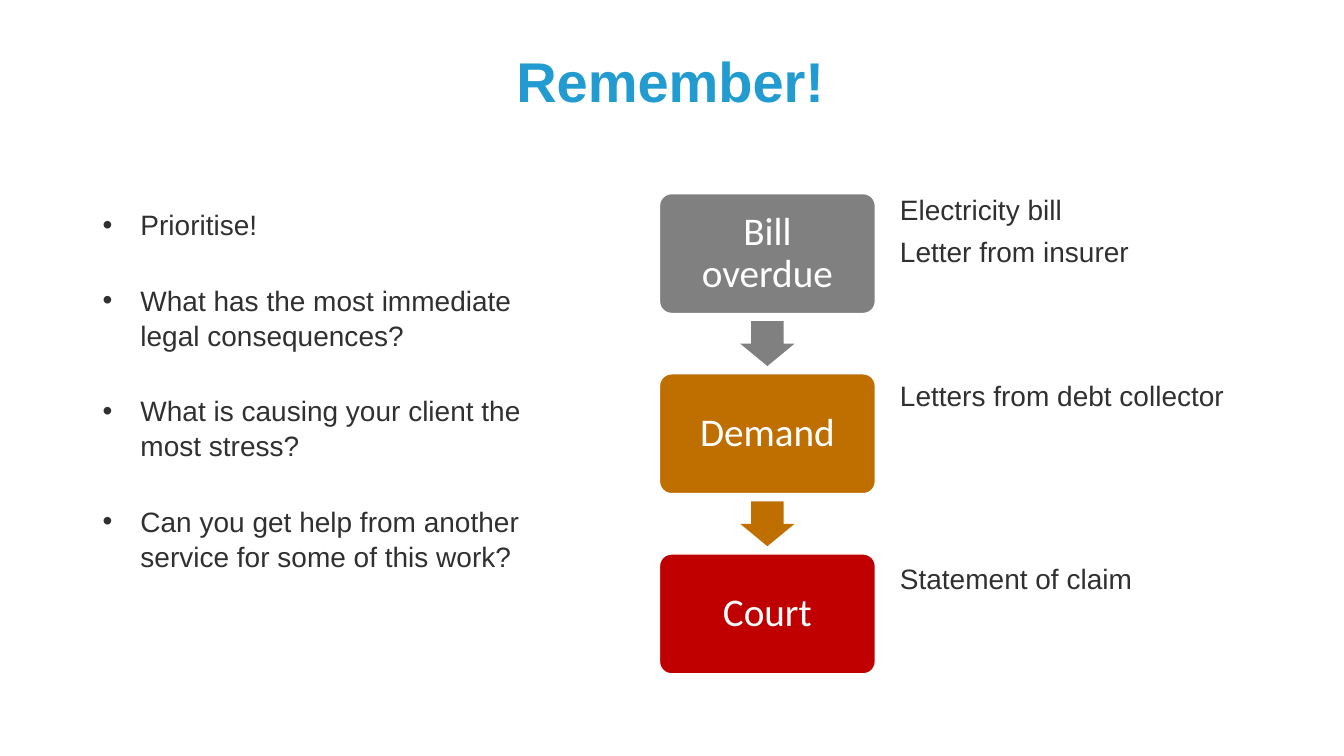
from pptx import Presentation
from pptx.dml.color import RGBColor
from pptx.enum.shapes import MSO_SHAPE
from pptx.enum.text import MSO_ANCHOR, PP_ALIGN
from pptx.oxml import parse_xml
from pptx.oxml.ns import nsdecls
from pptx.util import Cm, Pt

BLUE = RGBColor(0x22, 0x9C, 0xD0)
DARK = RGBColor(0x30, 0x30, 0x30)
WHITE = RGBColor(0xFF, 0xFF, 0xFF)
GREY = RGBColor(0x80, 0x80, 0x80)
AMBER = RGBColor(0xBF, 0x6E, 0x00)
RED = RGBColor(0xC0, 0x00, 0x00)

STEPS = [("Bill overdue", GREY), ("Demand", AMBER), ("Court", RED)]
# Each entry: text and the space above it in points
NOTES = [
    ("Electricity bill", 0),
    ("Letter from insurer", 5),
    ("Letters from debt collector", 77.5),
    ("Statement of claim", 106),
]
POINTS = [
    ("Prioritise!", 0),
    ("What has the most immediate legal consequences?", 29),
    ("What is causing your client the most stress?", 29),
    ("Can you get help from another service for some of this work?", 29),
]


def style(para, font, size, color, bold=False):
    for run in para.runs:
        run.font.name = font
        run.font.size = Pt(size)
        run.font.color.rgb = color
        run.font.bold = bold


def add_title(slide, text, left, top, width, height):
    title = slide.shapes.title
    title.left, title.top = Cm(left), Cm(top)
    title.width, title.height = Cm(width), Cm(height)
    frame = title.text_frame
    frame.text = text
    frame.vertical_anchor = MSO_ANCHOR.TOP
    para = frame.paragraphs[0]
    para.alignment = PP_ALIGN.CENTER
    para.line_spacing = 0.9
    style(para, "Arial", 40, BLUE, True)


def add_bullet(para):
    props = para._p.get_or_add_pPr()
    props.set("marL", str(Cm(0.95)))
    props.set("indent", str(-Cm(0.95)))
    props.append(parse_xml(f'<a:buFont {nsdecls("a")} typeface="Arial"/>'))
    props.append(parse_xml(f'<a:buChar {nsdecls("a")} char="•"/>'))


def add_list(slide, items, left, top, width, height, bullet=False):
    box = slide.shapes.add_textbox(Cm(left), Cm(top), Cm(width), Cm(height))
    frame = box.text_frame
    frame.word_wrap = True
    frame.text = "\n".join(text for text, _ in items)
    for para, (_, space) in zip(frame.paragraphs, items):
        para.space_before = Pt(space)
        para.line_spacing = 1.04
        style(para, "Arial", 20, DARK)
        if bullet:
            add_bullet(para)


def add_step(slide, text, color, left, top, width, height):
    step = slide.shapes.add_shape(
        MSO_SHAPE.ROUNDED_RECTANGLE, Cm(left), Cm(top), Cm(width), Cm(height))
    step.adjustments[0] = 0.1
    step.shadow.inherit = False
    step.fill.solid()
    step.fill.fore_color.rgb = color
    step.line.color.rgb = WHITE
    step.line.width = Pt(1)
    frame = step.text_frame
    frame.word_wrap = True
    frame.vertical_anchor = MSO_ANCHOR.MIDDLE
    frame.margin_left = frame.margin_right = Cm(0.38)
    frame.text = text
    para = frame.paragraphs[0]
    para.alignment = PP_ALIGN.CENTER
    para.line_spacing = 0.9
    style(para, "Calibri", 28, WHITE)


def add_arrow(slide, color, mid_x, mid_y):
    width, height = 1.37, 1.13
    arrow = slide.shapes.add_shape(
        MSO_SHAPE.DOWN_ARROW, Cm(mid_x - width / 2), Cm(mid_y - height / 2),
        Cm(width), Cm(height))
    arrow.adjustments[0] = 0.6
    arrow.adjustments[1] = 0.5
    arrow.shadow.inherit = False
    arrow.fill.solid()
    arrow.fill.fore_color.rgb = color
    arrow.line.fill.background()


def add_flow(slide, left, top, width, height):
    gap = 1.52
    tall = (height - gap * (len(STEPS) - 1)) / len(STEPS)
    for i, (text, color) in enumerate(STEPS):
        y = top + i * (tall + gap)
        add_step(slide, text, color, left, y, width, tall)
        if i < len(STEPS) - 1:
            add_arrow(slide, color, left + width / 2, y + tall + gap / 2)


def main():
    deck = Presentation()
    deck.slide_width, deck.slide_height = Cm(33.87), Cm(19.05)
    slide = deck.slides.add_slide(deck.slide_layouts[5])
    # Heading
    add_title(slide, "Remember!", 2.59, 1.24, 28.6, 2.46)
    # Escalation steps, with the papers seen at each one
    add_flow(slide, 16.62, 4.88, 5.44, 12.1)
    add_list(slide, NOTES, 22.43, 4.7, 9.12, 13.67)
    # Advice on the left
    add_list(slide, POINTS, 2.34, 5.08, 12.01, 12.09, bullet=True)
    deck.save("out.pptx")


if __name__ == "__main__":
    main()
